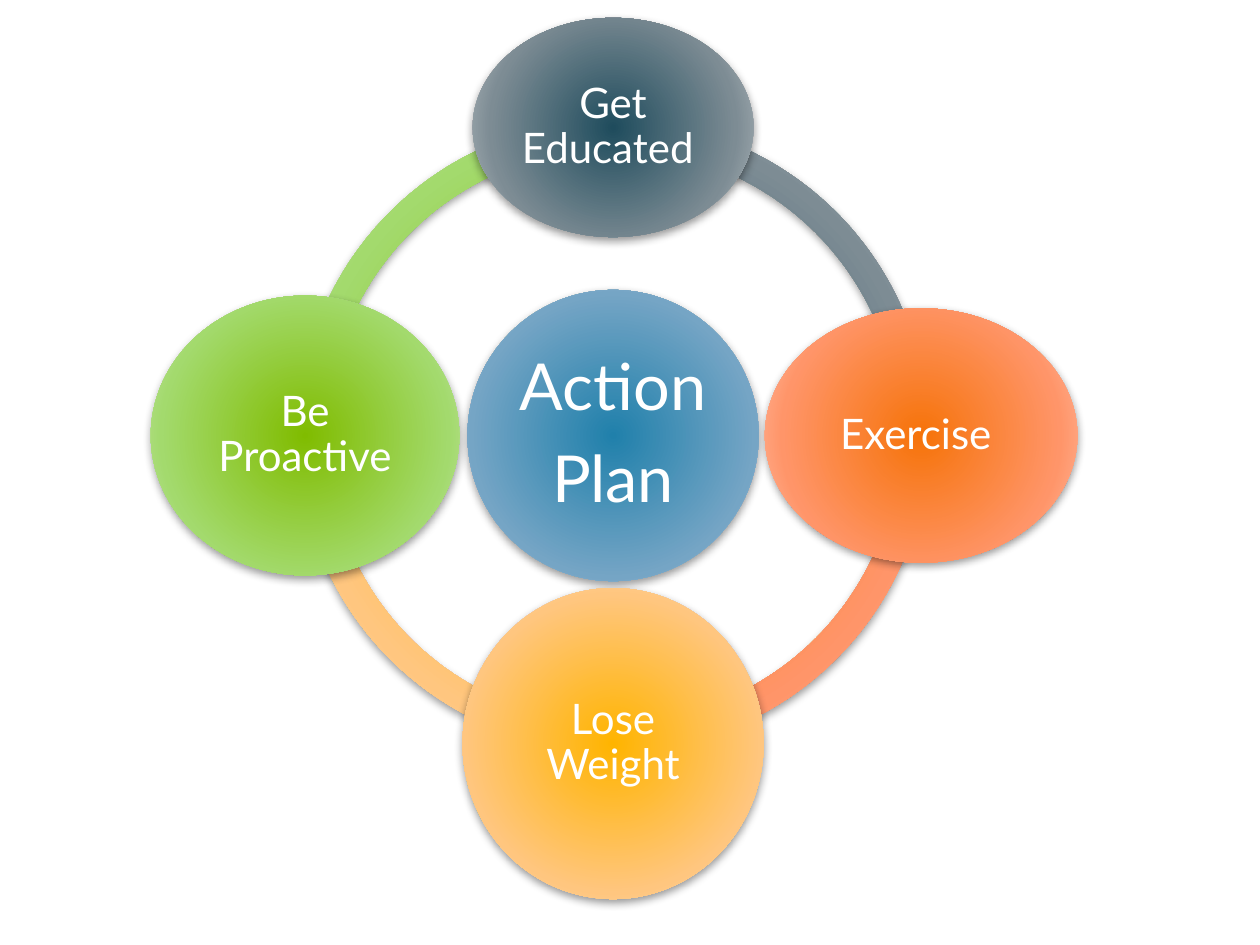
"""Builds the action plan slide: four steps on a ring around a central hub."""
from dataclasses import dataclass
from math import cos, radians, sin

from pptx import Presentation
from pptx.dml.color import RGBColor
from pptx.enum.shapes import MSO_SHAPE
from pptx.enum.text import MSO_ANCHOR, PP_ALIGN
from pptx.oxml import parse_xml
from pptx.oxml.ns import nsdecls, qn
from pptx.util import Cm, Pt


@dataclass(frozen=True)
class Theme:
    font: str = "Lato"
    text: str = "FFFFFF"
    shadow: str = "000000"
    hub_size: int = 37
    step_size: int = 24
    blue: tuple = ("2080AB", "75A5C5", "B8CCDC")
    slate: tuple = ("1F4C5D", "7D8C94", "BCC2C5")
    orange: tuple = ("F67309", "FF9569", "FEC3B0")
    amber: tuple = ("FFB400", "FFC67F", "FFDEBD")
    green: tuple = ("80BC00", "A3DA6D", "CBE7B4")


class CycleSlide:
    CENTER = (12.36, 8.78)
    RADIUS = 6.21
    RING = 12.73
    BAND = 0.046
    STOPS = (0, 69, 100)

    def __init__(self, slide, theme):
        self.slide = slide
        self.theme = theme

    def glossy(self, preset, center, size, shades):
        (x, y), (width, height) = center, size
        shape = self.slide.shapes.add_shape(
            preset, Cm(x - width / 2), Cm(y - height / 2), Cm(width), Cm(height))
        shape.line.fill.background()
        shape.fill.gradient()
        shape.shadow.inherit = False
        properties = shape.element.spPr
        stops = "".join(
            f'<a:gs pos="{stop * 1000}"><a:srgbClr val="{shade}"/></a:gs>'
            for stop, shade in zip(self.STOPS, shades))
        properties.replace(properties.find(qn("a:gradFill")), parse_xml(
            f'<a:gradFill {nsdecls("a")} rotWithShape="1"><a:gsLst>{stops}</a:gsLst>'
            '<a:path path="circle"><a:fillToRect l="100000" t="100000" r="100000" b="100000"/>'
            '</a:path></a:gradFill>'))
        properties.find(qn("a:effectLst")).append(parse_xml(
            f'<a:outerShdw {nsdecls("a")} blurRad="{Pt(5)}" dist="{Pt(2)}" dir="5400000" '
            f'rotWithShape="0"><a:srgbClr val="{self.theme.shadow}">'
            '<a:alpha val="40000"/></a:srgbClr></a:outerShdw>'))
        return shape

    def arc(self, start, shades):
        arc = self.glossy(MSO_SHAPE.BLOCK_ARC, self.CENTER, (self.RING, self.RING), shades)
        arc.adjustments[0] = start * 0.6
        arc.adjustments[1] = (start + 90) % 360 * 0.6
        arc.adjustments[2] = self.BAND

    def bubble(self, lines, center, size, shades, font_size, inset):
        frame = self.glossy(MSO_SHAPE.OVAL, center, size, shades).text_frame
        frame.word_wrap = True
        frame.vertical_anchor = MSO_ANCHOR.MIDDLE
        frame.margin_left = frame.margin_right = Cm(inset)
        frame.margin_top = frame.margin_bottom = Cm(inset)
        frame.text = "\n".join(lines)
        for paragraph in frame.paragraphs:
            paragraph.alignment = PP_ALIGN.CENTER
            paragraph.line_spacing = 0.9
            paragraph.space_after = Pt(round(font_size * 0.35, 1))
            paragraph.font.name = self.theme.font
            paragraph.font.size = Pt(font_size)
            paragraph.font.color.rgb = RGBColor.from_string(self.theme.text)

    def hub(self, lines, diameter):
        self.bubble(lines, self.CENTER, (diameter, diameter), self.theme.blue,
                    self.theme.hub_size, 0.13)

    def step(self, label, angle, size, shades):
        center = (self.CENTER[0] + self.RADIUS * cos(radians(angle)),
                  self.CENTER[1] + self.RADIUS * sin(radians(angle)))
        self.bubble([label], center, size, shades, self.theme.step_size, 0.08)


def main():
    theme = Theme()
    presentation = Presentation()
    presentation.slide_width, presentation.slide_height = Cm(25.4), Cm(19.05)
    cycle = CycleSlide(presentation.slides.add_slide(presentation.slide_layouts[6]), theme)

    steps = [
        ("Get Educated ", 270, (5.66, 4.42), theme.slate),
        ("Exercise ", 0, (6.3, 5.13), theme.orange),
        ("Lose Weight", 90, (6.07, 6.27), theme.amber),
        ("Be Proactive", 180, (6.22, 5.64), theme.green),
    ]
    for _, angle, _, shades in reversed(steps):
        cycle.arc(angle, shades)
    cycle.hub(["Action", "Plan"], 5.87)
    for step in steps:
        cycle.step(*step)

    presentation.save("out.pptx")


if __name__ == "__main__":
    main()
